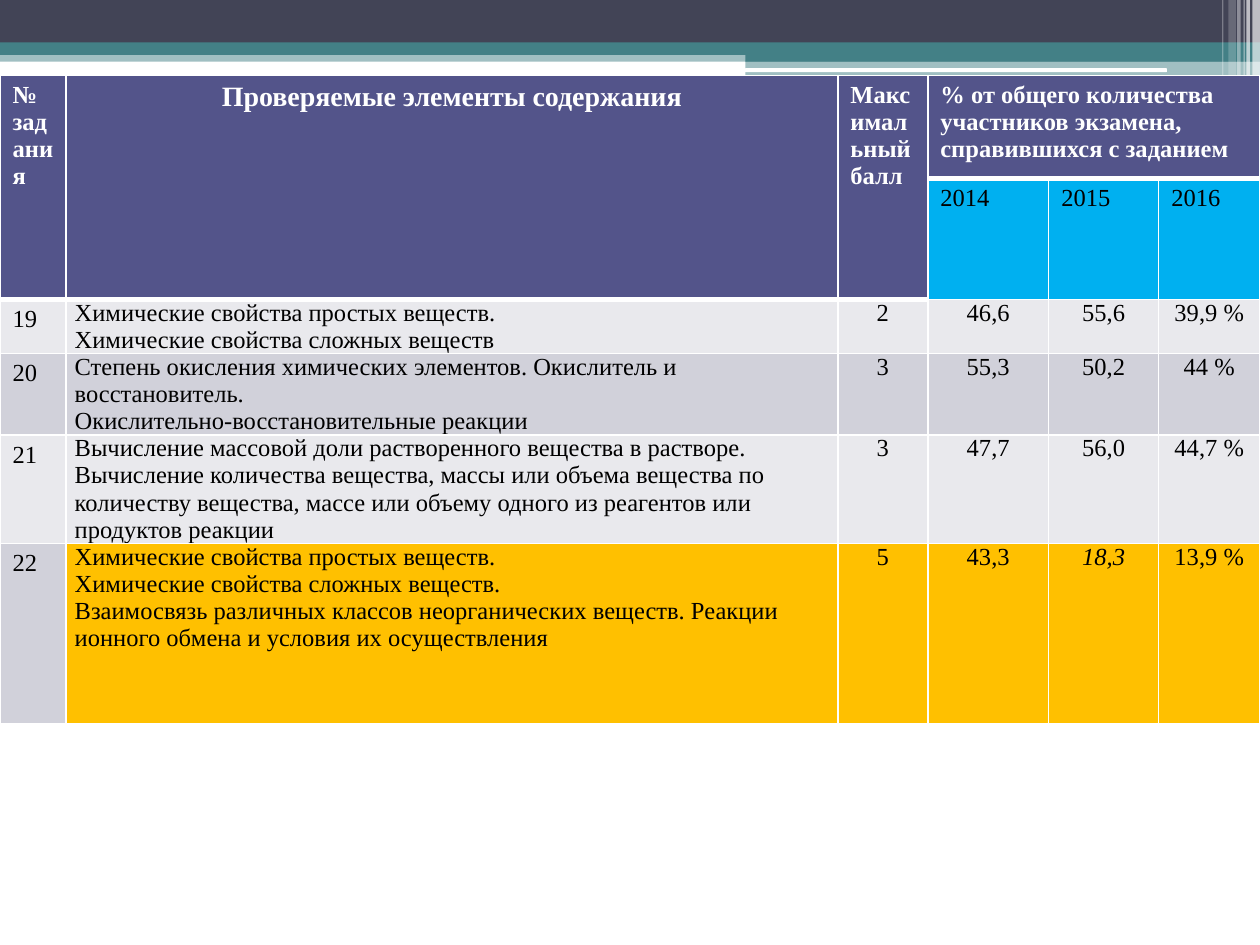
from lxml import etree
from pptx import Presentation
from pptx.dml.color import RGBColor
from pptx.enum.shapes import MSO_SHAPE
from pptx.enum.text import PP_ALIGN
from pptx.oxml.ns import qn
from pptx.util import Pt

RECT, ROUND = MSO_SHAPE.RECTANGLE, MSO_SHAPE.ROUNDED_RECTANGLE
LEFT, CENTER = PP_ALIGN.LEFT, PP_ALIGN.CENTER

FONT = "Times New Roman"
WHITE, BLACK, DARK, TEAL = "FFFFFF", "000000", "424456", "438086"
HEADER, YEAR, HIGHLIGHT = "53548A", "00B0F0", "FFC000"
BANDS = ("E9E9ED", "D1D1DA")

# Content
HEADINGS = ["№ задания", "Проверяемые элементы содержания", "Максимальный балл",
            "% от общего количества участников экзамена, справившихся с заданием"]
YEARS = ["2014", "2015", "2016"]
TASKS = [
    ("19", "Химические свойства простых веществ.\nХимические свойства сложных веществ",
     "2", "46,6", "55,6", "39,9 %"),
    ("20", "Степень окисления химических элементов. Окислитель и восстановитель.\n"
     "Окислительно-восстановительные реакции", "3", "55,3", "50,2", "44 %"),
    ("21", "Вычисление массовой доли растворенного вещества в растворе. "
     "Вычисление количества вещества, массы или объема вещества по количеству вещества, "
     "массе или объему одного из реагентов или продуктов реакции",
     "3", "47,7", "56,0", "44,7 %"),
    ("22", "Химические свойства простых веществ.\nХимические свойства сложных веществ.\n"
     "Взаимосвязь различных классов неорганических веществ. "
     "Реакции ионного обмена и условия их осуществления",
     "5", "43,3", "18,3", "13,9 %"),
]
HARD_TASK, ITALIC_VALUE = "22", "18,3"

# Layout: left, top, width, height, colour, opacity in percent
BANNER = [
    (RECT, 0, 28.8, 720, 6.5, TEAL, 50),
    (RECT, 0, 0, 720, 24.5, DARK, 100),
    (RECT, 0, 24.2, 720, 7.2, TEAL, 100),
    (RECT, 426, 28.2, 294, 7, TEAL, 100),
    (RECT, 426, 34.7, 294, 14.3, TEAL, 50),
    (ROUND, 425.6, 39, 241.2, 2.2, WHITE, 100),
    (ROUND, 580.3, 46.2, 126, 2.9, WHITE, 100),
]
# Light stripes at the right end: left, width, height, opacity
STRIPES = [(715.7, 4.3, 49, 65), (712.2, 2, 49, 65), (710.6, 0.7, 49, 60),
           (707, 2, 49, 40), (702, 4.3, 46, 20), (698.4, 0.7, 46, 30)]
TABLE_TOP = 43
COLUMN_WIDTHS = [37.7, 441.1, 51.4, 69.1, 62.9, 57.8]
ROW_HEIGHTS = [59, 68.5, 31, 46.5, 62, 103]
CELL_MARGINS = [(7.2, 3.6), (5, 0), (5, 0), (0, 0), (0, 0), (5, 0)]


def rgb(code):
    return RGBColor.from_string(code)


def add_bar(slide, kind, left, top, width, height, color, opacity):
    bar = slide.shapes.add_shape(kind, Pt(left), Pt(top), Pt(width), Pt(height))
    bar.shadow.inherit = False
    bar.line.fill.background()
    bar.fill.solid()
    bar.fill.fore_color.rgb = rgb(color)
    if opacity < 100:
        tint = bar.fill._xPr.find(".//" + qn("a:srgbClr"))
        etree.SubElement(tint, qn("a:alpha"), val=str(opacity * 1000))


def style_cell(cell, fill, bottom=1):
    properties = cell._tc.get_or_add_tcPr()
    for side, width in (("L", 1), ("R", 1), ("T", 1), ("B", bottom)):
        line = etree.SubElement(properties, qn("a:ln" + side), w=str(Pt(width)))
        solid = etree.SubElement(line, qn("a:solidFill"))
        etree.SubElement(solid, qn("a:srgbClr"), val=WHITE)
    cell.fill.solid()
    cell.fill.fore_color.rgb = rgb(fill)


def write(cell, text, color=BLACK, size=14, bold=False, align=LEFT, margins=(7.2, 3.6)):
    cell.margin_left = cell.margin_right = Pt(margins[0])
    cell.margin_top = cell.margin_bottom = Pt(margins[1])
    cell.text = text
    for paragraph in cell.text_frame.paragraphs:
        paragraph.alignment = align
        font = paragraph.font
        font.name, font.size, font.bold = FONT, Pt(size), bold
        font.italic = text == ITALIC_VALUE
        font.color.rgb = rgb(color)


prs = Presentation()
prs.slide_width, prs.slide_height = Pt(720), Pt(540)
slide = prs.slides.add_slide(prs.slide_layouts[6])

# Banner
for bar in BANNER:
    add_bar(slide, *bar)
for left, width, height, opacity in STRIPES:
    add_bar(slide, RECT, left, 0, width, height, WHITE, opacity)

# Table grid
table = slide.shapes.add_table(len(ROW_HEIGHTS), len(COLUMN_WIDTHS), 0, Pt(TABLE_TOP),
                               Pt(sum(COLUMN_WIDTHS)), Pt(sum(ROW_HEIGHTS))).table
table.first_row = table.horz_banding = False
for column, width in zip(table.columns, COLUMN_WIDTHS):
    column.width = Pt(width)
for row, height in zip(table.rows, ROW_HEIGHTS):
    row.height = Pt(height)

# Two-level header
for c in range(len(COLUMN_WIDTHS)):
    style_cell(table.cell(0, c), HEADER, bottom=3)
    if c < 3:
        style_cell(table.cell(1, c), HEADER, bottom=3)
        table.cell(0, c).merge(table.cell(1, c))
    else:
        style_cell(table.cell(1, c), YEAR)
        write(table.cell(1, c), YEARS[c - 3])
table.cell(0, 3).merge(table.cell(0, 5))
for c, heading in enumerate(HEADINGS):
    wide = c == 1
    write(table.cell(0, c), heading, WHITE, 16 if wide else 14, True,
          CENTER if wide else LEFT)

# Task rows
for r, task in enumerate(TASKS):
    for c, text in enumerate(task):
        cell = table.cell(r + 2, c)
        highlighted = task[0] == HARD_TASK and c > 0
        style_cell(cell, HIGHLIGHT if highlighted else BANDS[r % 2])
        write(cell, text, align=CENTER if c > 1 else LEFT, margins=CELL_MARGINS[c])

prs.save("out.pptx")
